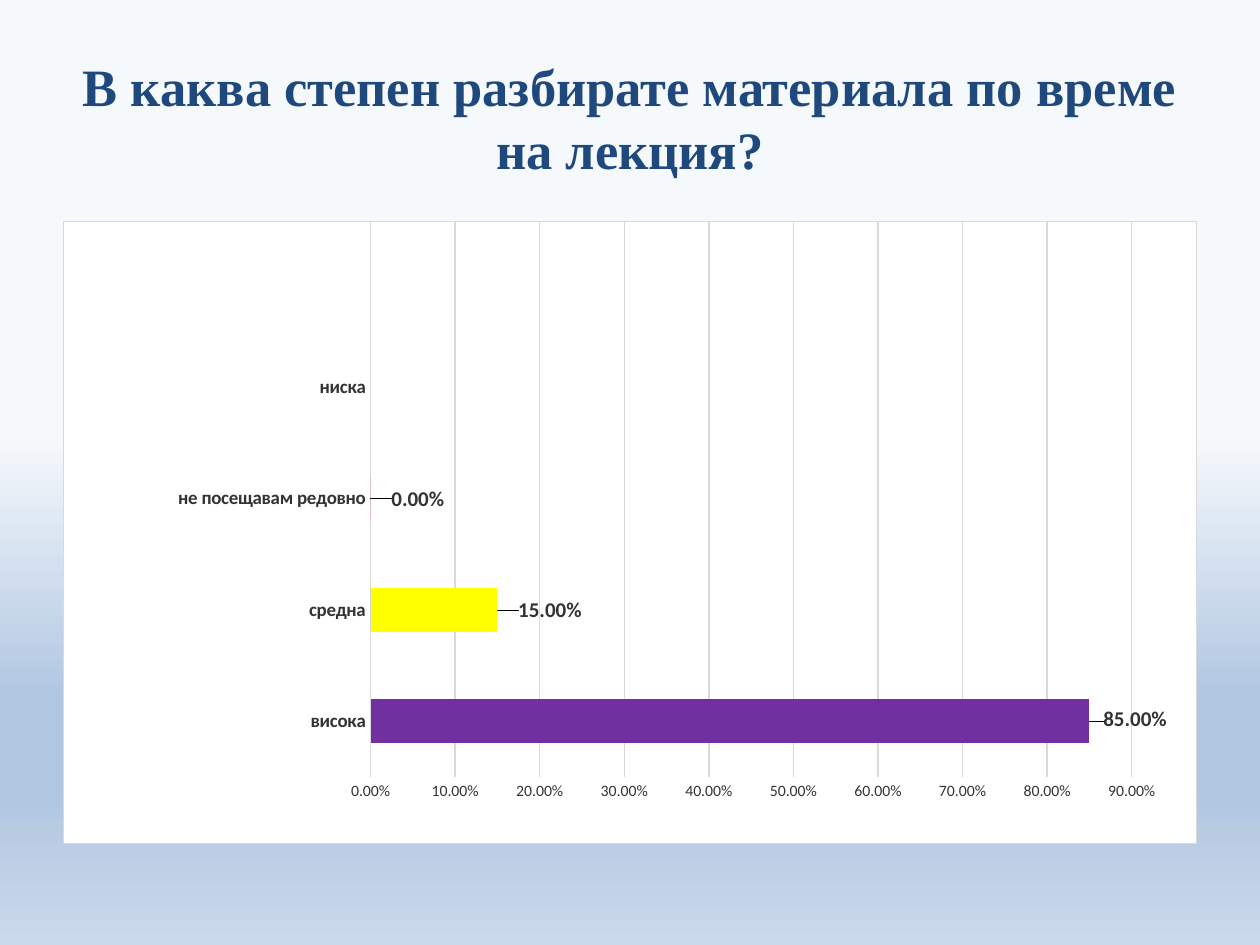
from dataclasses import dataclass

from lxml import etree
from pptx import Presentation
from pptx.chart.data import CategoryChartData
from pptx.dml.color import RGBColor
from pptx.enum.chart import XL_CHART_TYPE, XL_LABEL_POSITION, XL_TICK_MARK
from pptx.enum.text import MSO_ANCHOR, MSO_AUTO_SIZE, PP_ALIGN
from pptx.oxml import parse_xml
from pptx.oxml.ns import nsdecls, qn
from pptx.util import Pt

BAR = XL_CHART_TYPE.BAR_CLUSTERED
OUTSIDE = XL_LABEL_POSITION.OUTSIDE_END
NO_TICK = XL_TICK_MARK.NONE
CENTER = PP_ALIGN.CENTER
MIDDLE = MSO_ANCHOR.MIDDLE
NO_FIT = MSO_AUTO_SIZE.NONE


@dataclass(frozen=True)
class Theme:
    title_font: str = "Times New Roman"
    chart_font: str = "Calibri"
    title: str = "1F497D"
    text: str = "333333"
    chart_text: str = "000000"
    panel: str = "FFFFFF"
    rule: str = "D9D9D9"
    series: str = "00B0F0"
    points: tuple = ("7030A0", "FFFF00", "FF0000")
    backdrop: tuple = ((46, "F6F9FC"), (74, "B0C6E1"), (83, "B0C6E1"), (100, "CAD9EB"))
    title_size: float = 30
    chart_size: float = 10
    category_size: float = 10.8
    value_size: float = 9
    label_size: float = 12
    rule_width: float = 0.75


T = Theme()
PERCENT = "0.00%"
ANSWERS = (("висока", 0.85), ("средна", 0.15), ("не посещавам редовно", 0),
           ("ниска", None), ("", None))
LABEL_SHIFTS = ((0.008, -0.003), (0.014, 0), (0.014, 0))
PLOT_BOX = {"x": 0.271, "y": 0, "w": 0.672, "h": 0.893}


def set_font(font, name, size, color, bold=False):
    font.name, font.size, font.bold = name, Pt(size), bold
    font.color.rgb = RGBColor.from_string(color)


def write_text(tf, text, *, name, size, color, bold=False, align=CENTER, anchor=MIDDLE):
    tf.word_wrap, tf.auto_size, tf.vertical_anchor = True, NO_FIT, anchor
    p = tf.paragraphs[0]
    p.alignment = align
    r = p.add_run()
    r.text = text
    set_font(r.font, name, size, color, bold)


def paint_background(slide):
    stops = "".join(f'<a:gs pos="{pos * 1000}"><a:srgbClr val="{color}"/></a:gs>'
                    for pos, color in T.backdrop)
    grad = parse_xml(f'<a:gradFill {nsdecls("a")} rotWithShape="1"><a:gsLst>{stops}</a:gsLst>'
                     '<a:lin ang="5400000" scaled="0"/></a:gradFill>')
    fill = slide.background.fill
    fill.solid()
    solid = slide.element.find(".//" + qn("p:bgPr")).find(qn("a:solidFill"))
    solid.getparent().replace(solid, grad)


def add_title(slide, box, text):
    sp = slide.shapes.title
    sp.left, sp.top, sp.width, sp.height = map(Pt, box)
    write_text(sp.text_frame, text, name=T.title_font, size=T.title_size,
               color=T.title, bold=True)


def manual_layout(values, inner=False):
    layout = etree.Element(qn("c:layout"))
    manual = etree.SubElement(layout, qn("c:manualLayout"))
    if inner:
        etree.SubElement(manual, qn("c:layoutTarget")).set("val", "inner")
        for key in ("xMode", "yMode"):
            etree.SubElement(manual, qn(f"c:{key}")).set("val", "edge")
    for key, value in values.items():
        etree.SubElement(manual, qn(f"c:{key}")).set("val", str(value))
    return layout


def frame_chart(chart):
    plot_area = chart.element.find(".//" + qn("c:plotArea"))
    for old in plot_area.findall(qn("c:layout")):
        plot_area.remove(old)
    plot_area.insert(0, manual_layout(PLOT_BOX, inner=True))
    chart.element.find(qn("c:txPr")).addprevious(parse_xml(
        f'<c:spPr {nsdecls("c", "a")}>'
        f'<a:solidFill><a:srgbClr val="{T.panel}"/></a:solidFill>'
        f'<a:ln w="{Pt(T.rule_width)}"><a:solidFill><a:srgbClr val="{T.rule}"/>'
        '</a:solidFill></a:ln></c:spPr>'))


def format_axes(chart):
    cat, val = chart.category_axis, chart.value_axis
    for axis, size, bold in ((cat, T.category_size, True), (val, T.value_size, False)):
        axis.major_tick_mark = axis.minor_tick_mark = NO_TICK
        axis.format.line.fill.background()
        set_font(axis.tick_labels.font, T.chart_font, size, T.text, bold)
    cat.has_major_gridlines = False
    val.minimum_scale, val.maximum_scale, val.major_unit = 0, 0.9, 0.1
    val.tick_labels.number_format = PERCENT
    val.tick_labels.number_format_is_linked = False
    val.has_major_gridlines = True
    line = val.major_gridlines.format.line
    line.width = Pt(T.rule_width)
    line.color.rgb = RGBColor.from_string(T.rule)


def format_bars(plot):
    plot.gap_width = 150
    plot.vary_by_categories = False
    series = plot.series[0]
    series.invert_if_negative = False
    series.format.fill.solid()
    series.format.fill.fore_color.rgb = RGBColor.from_string(T.series)
    labels = series.data_labels
    labels.show_value = True
    labels.position = OUTSIDE
    labels.number_format = PERCENT
    labels.number_format_is_linked = False
    set_font(labels.font, T.chart_font, T.label_size, T.text, True)
    for i, (color, (dx, dy)) in enumerate(zip(T.points, LABEL_SHIFTS)):
        point = series.points[i]
        point.format.fill.solid()
        point.format.fill.fore_color.rgb = RGBColor.from_string(color)
        label = point.data_label
        set_font(label.font, T.chart_font, T.label_size, T.text, True)
        label.position = OUTSIDE
        idx = labels._element.findall(qn("c:dLbl"))[i].find(qn("c:idx"))
        idx.addnext(manual_layout({"x": dx, "y": dy}))


def add_answers_chart(slide, box):
    data = CategoryChartData(number_format=PERCENT)
    data.categories = [name for name, _ in ANSWERS]
    data.add_series("Series 1", [value for _, value in ANSWERS])
    chart = slide.shapes.add_chart(BAR, *map(Pt, box), data).chart
    chart.has_title = chart.has_legend = False
    set_font(chart.font, T.chart_font, T.chart_size, T.chart_text)
    frame_chart(chart)
    format_axes(chart)
    format_bars(chart.plots[0])


def main():
    prs = Presentation()
    prs.slide_width, prs.slide_height = Pt(720), Pt(540)
    slide = prs.slides.add_slide(prs.slide_layouts[5])
    paint_background(slide)
    add_title(slide, (36, 21.6, 648, 90),
              "В каква степен разбирате материала по време на лекция?")
    add_answers_chart(slide, (36, 126, 648, 356.4))
    prs.save("out.pptx")


if __name__ == "__main__":
    main()
